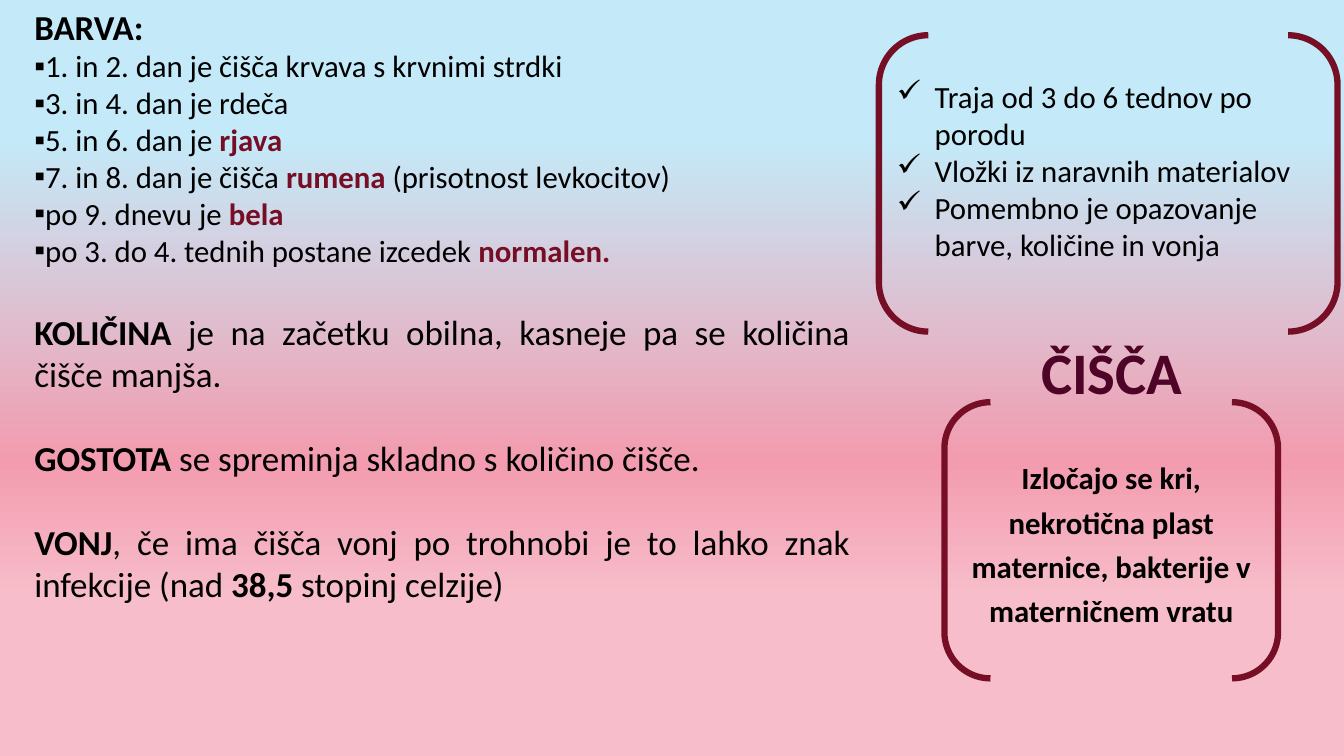
from lxml import etree
from pptx import Presentation
from pptx.dml.color import RGBColor
from pptx.enum import shapes, text
from pptx.oxml import ns
from pptx.util import Pt

BLACK = RGBColor(0x00, 0x00, 0x00)
WINE = RGBColor(0x76, 0x0E, 0x25)
PLUM = RGBColor(0x4E, 0x04, 0x27)
SKY = RGBColor(0xC4, 0xEA, 0xF9)
ROSE = RGBColor(0xF3, 0x9C, 0xAF)
PINK = RGBColor(0xF7, 0xBD, 0xCA)
STOPS = [(18, SKY), (61, ROSE), (79, PINK)]

# Each run is (words, bold, colour).
COLOUR = [
    [("1. in 2. dan je čišča krvava s krvnimi strdki", False, BLACK)],
    [("3. in 4. dan je rdeča", False, BLACK)],
    [("5. in 6. dan je ", False, BLACK), ("rjava", True, WINE)],
    [("7. in 8. dan je čišča ", False, BLACK), ("rumena", True, WINE),
     (" (prisotnost levkocitov)", False, BLACK)],
    [("po 9. dnevu je ", False, BLACK), ("bela", True, WINE)],
    [("po 3. do 4. tednih postane izcedek ", False, BLACK),
     ("normalen.", True, WINE)],
]
TRAITS = [
    [("KOLIČINA", True, BLACK),
     (" je na začetku obilna, kasneje pa se količina čišče manjša.",
      False, BLACK)],
    [("GOSTOTA ", True, BLACK),
     ("se spreminja skladno s količino čišče.", False, BLACK)],
    [("VONJ", True, BLACK),
     (", če ima čišča vonj po trohnobi je to lahko znak infekcije (nad ",
      False, BLACK),
     ("38,5 ", True, BLACK), ("stopinj celzije)", False, BLACK)],
]
ADVICE = ["Traja od 3 do 6 tednov po porodu", "Vložki iz naravnih materialov",
          "Pomembno je opazovanje barve, količine in vonja"]
FLOW = ("Izločajo se kri, nekrotična plast maternice, "
        "bakterije v materničnem vratu")


def place(shape, left, top, width, height):
    shape.left, shape.top = Pt(left), Pt(top)
    shape.width, shape.height = Pt(width), Pt(height)


def bullet(para, mark=None, hang=0):
    props = para._p.get_or_add_pPr()
    props.set("marL", str(Pt(hang)))
    props.set("indent", str(-Pt(hang)))
    if mark:
        etree.SubElement(props, ns.qn("a:buChar")).set("char", mark)
    else:
        etree.SubElement(props, ns.qn("a:buNone"))


def style(para, size, align, color=None, bold=None):
    para.alignment = align
    font = para.font
    font.name, font.size, font.bold = "Calibri", Pt(size), bold
    if color is not None:
        font.color.rgb = color


def lines(frame):
    """Yield the first paragraph, then a new one each time."""
    yield frame.paragraphs[0]
    while True:
        yield frame.add_paragraph()


def mixed(para, runs, size, mark=None, gap=0):
    bullet(para, mark)
    para.space_before = Pt(gap)
    style(para, size, text.PP_ALIGN.JUSTIFY)
    for words, bold, color in runs:
        run = para.add_run()
        run.text = words
        run.font.bold, run.font.color.rgb = bold, color


def backdrop(slide):
    fill = slide.background.fill
    fill.gradient()
    fill.gradient_angle = 270
    stops = slide.background._cSld.find(".//" + ns.qn("a:gsLst"))
    for old in list(stops):
        stops.remove(old)
    for share, color in STOPS:
        stop = etree.SubElement(stops, ns.qn("a:gs"), pos=str(share * 1000))
        etree.SubElement(stop, ns.qn("a:srgbClr"), val=str(color))


def title(slide):
    shape = slide.shapes.title
    place(shape, 693.4, 224.6, 201.6, 69.8)
    frame = shape.text_frame
    frame.auto_size = text.MSO_AUTO_SIZE.NONE
    frame.vertical_anchor = text.MSO_ANCHOR.BOTTOM
    frame.text = "ČIŠČA"
    para = frame.paragraphs[0]
    para.line_spacing = 0.9
    style(para, 42, text.PP_ALIGN.CENTER, PLUM, True)


def body(slide):
    shape = slide.placeholders[1]
    place(shape, 17.3, 0, 596.9, 510.5)
    frame = shape.text_frame
    frame.auto_size = text.MSO_AUTO_SIZE.NONE
    paras = lines(frame)
    mixed(next(paras), [("BARVA:", True, BLACK)], 25)
    for runs in COLOUR:
        mixed(next(paras), runs, 22, "▪")
    for runs in TRAITS:
        mixed(next(paras), runs, 25, gap=30)


def advice(slide):
    box = slide.shapes.add_textbox(Pt(633.6), Pt(51.8), Pt(326.9), Pt(167))
    box.text_frame.word_wrap = True
    for words, para in zip(ADVICE, lines(box.text_frame)):
        para.text = words
        bullet(para, "✓", 27)
        style(para, 22, text.PP_ALIGN.LEFT, BLACK)


def bracket(slide, left, top, width, height):
    shape = slide.shapes.add_shape(
        shapes.MSO_SHAPE.DOUBLE_BRACKET,
        Pt(left), Pt(top), Pt(width), Pt(height))
    shape.shadow.inherit = False
    shape.fill.background()
    shape.line.color.rgb, shape.line.width = WINE, Pt(4.5)
    return shape


def flow(slide):
    frame = bracket(slide, 674.6, 287.3, 238.3, 197.3).text_frame
    frame.vertical_anchor = text.MSO_ANCHOR.MIDDLE
    frame.text = FLOW
    para = frame.paragraphs[0]
    para.line_spacing = 1.2
    style(para, 22, text.PP_ALIGN.CENTER, BLACK, True)


def main():
    deck = Presentation()
    deck.slide_width, deck.slide_height = Pt(960), Pt(540)
    slide = deck.slides.add_slide(deck.slide_layouts[1])
    backdrop(slide)
    title(slide)
    body(slide)
    advice(slide)
    flow(slide)
    bracket(slide, 627.8, 25.2, 327.6, 211.7)
    deck.save("out.pptx")


if __name__ == "__main__":
    main()
